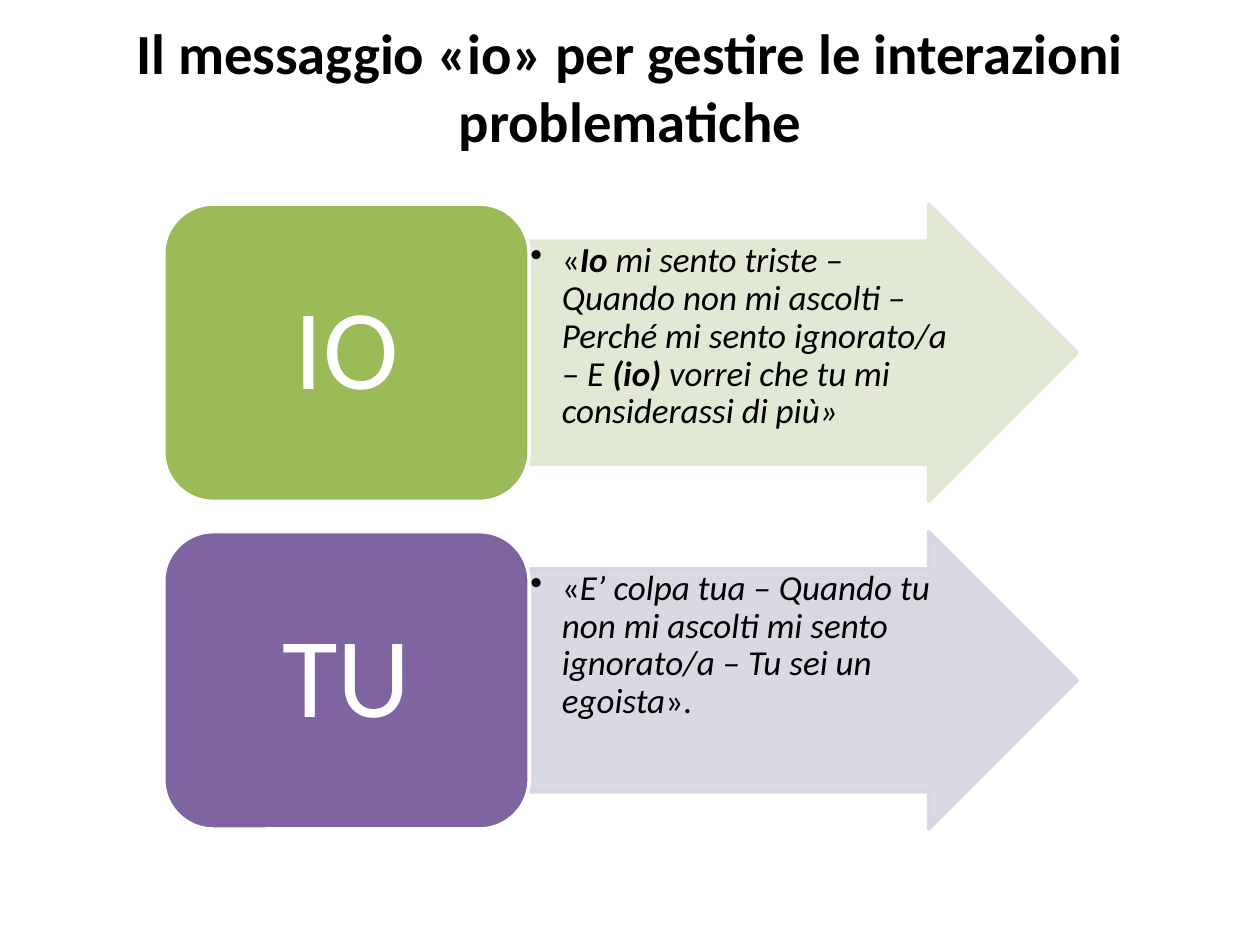
from lxml import etree
from pptx import Presentation
from pptx.dml.color import RGBColor
from pptx.enum.shapes import MSO_SHAPE
from pptx.enum.text import MSO_ANCHOR, PP_ALIGN
from pptx.oxml.ns import qn
from pptx.util import Inches, Pt

ARROW = MSO_SHAPE.RIGHT_ARROW
ROUNDED = MSO_SHAPE.ROUNDED_RECTANGLE
TOP, MIDDLE = MSO_ANCHOR.TOP, MSO_ANCHOR.MIDDLE
LEFT, CENTER = PP_ALIGN.LEFT, PP_ALIGN.CENTER

COLORS = {
    "text": "000000",
    "white": "FFFFFF",
    "io": "9BBB59",
    "io_arrow": "DEE7D1",
    "tu": "8064A2",
    "tu_arrow": "D8D3E0",
}
FONT = "Calibri"

PLAIN, ITALIC, BOLD, BOLD_ITALIC = (
    (False, False), (False, True), (True, False), (True, True))
MESSAGES = [
    ("IO", "io", [
        ("«", PLAIN),
        ("Io", BOLD_ITALIC),
        (" mi sento triste – Quando non mi ascolti – "
         "Perché mi sento ignorato/a – E ", ITALIC),
        ("(io) ", BOLD_ITALIC),
        ("vorrei che tu mi considerassi di più»", ITALIC),
    ]),
    ("TU", "tu", [
        ("«", PLAIN),
        ("E’ colpa tua – Quando tu non mi ascolti mi sento "
         "ignorato/a – Tu sei un egoista", ITALIC),
        ("».", PLAIN),
    ]),
]


def rgb(name):
    """Return the named palette colour."""
    return RGBColor.from_string(COLORS[name])


def add_text(slide, box, runs, size, color, align, anchor, insets, spacing=0.9):
    """Add a one-paragraph text box and return its paragraph."""
    frame = slide.shapes.add_textbox(*map(Inches, box)).text_frame
    frame.word_wrap = True
    frame.vertical_anchor = anchor
    (frame.margin_left, frame.margin_top,
     frame.margin_right, frame.margin_bottom) = map(Inches, insets)
    paragraph = frame.paragraphs[0]
    paragraph.alignment = align
    paragraph.line_spacing = spacing
    for text, (bold, italic) in runs:
        run = paragraph.add_run()
        run.text = text
        run.font.name = FONT
        run.font.size = Pt(size)
        run.font.bold = bold
        run.font.italic = italic
        run.font.color.rgb = rgb(color)
    return paragraph


def add_block(slide, preset, box, fill, line, adjustments=(), opacity=100):
    """Add a filled, outlined preset shape with the given opacity."""
    block = slide.shapes.add_shape(preset, *map(Inches, box))
    block.shadow.inherit = False
    for index, value in enumerate(adjustments):
        block.adjustments[index] = value
    block.fill.solid()
    block.fill.fore_color.rgb = rgb(fill)
    block.line.color.rgb = rgb(line)
    block.line.width = Pt(2)
    if opacity < 100:
        for color in block._element.spPr.iter(qn("a:srgbClr")):
            etree.SubElement(color, qn("a:alpha"), val=str(opacity * 1000))


def add_bullet(paragraph, indent):
    """Give the paragraph a round bullet with a hanging indent."""
    properties = paragraph._p.get_or_add_pPr()
    properties.set("marL", str(Inches(indent)))
    properties.set("indent", str(-Inches(indent)))
    etree.SubElement(properties, qn("a:buChar"), char="•")


def add_title(slide, box):
    """Place the slide title in the box."""
    title = [("Il messaggio «io» per gestire le interazioni problematiche", BOLD)]
    add_text(slide, box, title, 32.4, "text", CENTER, MIDDLE,
             (0.1, 0.05, 0.1, 0.53), 1.0)


def add_message(slide, box, label, color, quote):
    """Place a labelled card and its arrow with the quote in the box."""
    left, top, width, height = box
    card_width = width * 0.4
    arrow_left, arrow_width = left + card_width, width * 0.6
    arrow_color = f"{color}_arrow"
    add_block(slide, ARROW, (arrow_left, top, arrow_width, height),
              arrow_color, arrow_color, (0.75, 0.5), 90)
    quote_box = (arrow_left, top + height / 8, 3.46, height * 0.75)
    paragraph = add_text(slide, quote_box, quote, 20, "text", LEFT, TOP,
                         (0.01,) * 4)
    add_bullet(paragraph, 0.25)

    add_block(slide, ROUNDED, (left, top, card_width, height), color, "white")
    pad = 0.115
    label_box = (left + pad, top + pad, card_width - 2 * pad, height - 2 * pad)
    add_text(slide, label_box, [(label, PLAIN)], 65, "white", CENTER, MIDDLE,
             (0.27, 0.14, 0.27, 0.14))


def main():
    """Build and save the slide."""
    deck = Presentation()
    deck.slide_width, deck.slide_height = Inches(10), Inches(7.5)
    slide = deck.slides.add_slide(deck.slide_layouts[6])
    add_title(slide, (0.5, 0.3, 9, 1.25))
    for row, message in enumerate(MESSAGES):
        add_message(slide, (1.3, 1.62 + row * 2.6, 7.25, 2.36), *message)
    deck.save("out.pptx")


if __name__ == "__main__":
    main()
